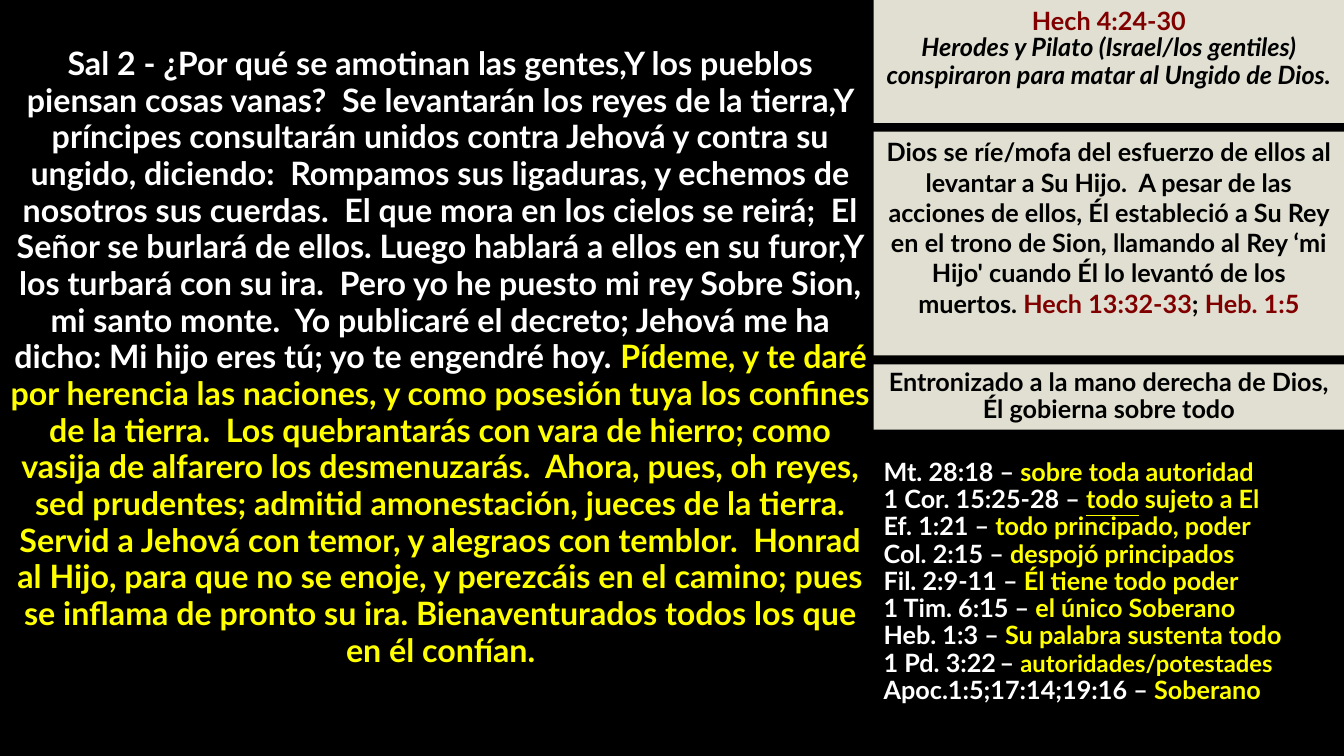
from pptx import Presentation
from pptx.dml.color import RGBColor
from pptx.enum.shapes import MSO_SHAPE
from pptx.enum.text import MSO_ANCHOR, MSO_AUTO_SIZE, PP_ALIGN
from pptx.util import Cm, Pt

RECTANGLE = MSO_SHAPE.RECTANGLE
TOP = MSO_ANCHOR.TOP
GROW = MSO_AUTO_SIZE.SHAPE_TO_FIT_TEXT
LEFT, CENTER = PP_ALIGN.LEFT, PP_ALIGN.CENTER

BLACK, WHITE, YELLOW = "000000", "FFFFFF", "FFFF00"
MAROON, PANEL_FILL = "800000", "E0DFD2"
FONT = "Lato"

# Content: a run is (text, colour, font values that differ from the base)
PSALM = [
    ("Sal 2 - ¿Por qué se amotinan las gentes,Y los pueblos piensan cosas vanas?  "
     "Se levantarán los reyes de la tierra,Y príncipes consultarán unidos contra "
     "Jehová y contra su ungido, diciendo:  Rompamos sus ligaduras, y echemos de "
     "nosotros sus cuerdas.  El que mora en los cielos se reirá;  El Señor se "
     "burlará de ellos. Luego hablará a ellos en su furor,Y los turbará con su ira.  "
     "Pero yo he puesto mi rey Sobre Sion, mi santo monte.  Yo publicaré el decreto; "
     "Jehová me ha dicho: Mi hijo eres tú; yo te engendré hoy. ", WHITE, {}),
    ("Pídeme, y te daré por herencia las naciones, y como posesión tuya los confines "
     "de la tierra.  Los quebrantarás con vara de hierro; como vasija de alfarero los "
     "desmenuzarás.  Ahora, pues, oh reyes, sed prudentes; admitid amonestación, "
     "jueces de la tierra. Servid a Jehová con temor, y alegraos con temblor.  Honrad "
     "al Hijo, para que no se enoje, y perezcáis en el camino; pues se inflama de "
     "pronto su ira. Bienaventurados todos los que en él confían.", YELLOW, {}),
]

# Panels: (height in cm, [(line spacing, runs)])
PANELS = [
    (3.1, [
        (1.0, [("Hech 4:24-30", MAROON, {})]),
        (0.9, [("Herodes y Pilato (Israel/los gentiles) conspiraron para matar al "
                "Ungido de Dios.", BLACK, {"italic": True})]),
    ]),
    (5.64, [
        (1.0, [("Dios se ríe/mofa del esfuerzo de ellos al levantar a Su Hijo.  "
                "A pesar de las acciones de ellos, Él estableció a Su Rey en el trono "
                "de Sion, llamando al Rey ‘mi Hijo' cuando Él lo levantó de los "
                "muertos. ", BLACK, {}),
               ("Hech 13:32-33", MAROON, {}),
               ("; ", BLACK, {}),
               ("Heb. 1:5", MAROON, {})]),
    ]),
    (1.65, [
        (0.9, [("Entronizado a la mano derecha de Dios, Él gobierna sobre todo",
                BLACK, {})]),
    ]),
]

REFERENCES = [
    [("Mt. 28:18 – ", WHITE, {}), ("sobre toda autoridad", YELLOW, {})],
    [("1 Cor. 15:25-28 – ", WHITE, {}), ("todo", YELLOW, {"underline": True}),
     (" sujeto a El", YELLOW, {})],
    [("Ef. 1:21 – ", WHITE, {}), ("todo principado, poder", YELLOW, {})],
    [("Col. 2:15 – ", WHITE, {}), ("despojó principados", YELLOW, {})],
    [("Fil. 2:9-11 – ", WHITE, {}), ("Él tiene todo poder", YELLOW, {})],
    [("1 Tim. 6:15 – ", WHITE, {}), ("el único Soberano", YELLOW, {})],
    [("Heb. 1:3 – ", WHITE, {}), ("Su palabra sustenta todo", YELLOW, {})],
    [("1 Pd. 3:22", WHITE, {}), (" ", WHITE, {"size": Pt(10)}), ("– ", WHITE, {}),
     ("autoridades/potestades", YELLOW, {"size": Pt(17)})],
    [("Apoc.1:5;17:14;19:16 – ", WHITE, {}), ("Soberano", YELLOW, {})],
]

# Layout in cm
SLIDE_WIDTH, SLIDE_HEIGHT = 33.87, 19.05
COLUMN_LEFT = 22.02
PANEL_GAP = 0.22
PSALM_BOX = (0, 1.04, 22.22, 18.01)
REFERENCES_BOX = (COLUMN_LEFT, 11.46, 12.27, 6.48)


def set_fill(fill, colour):
    fill.solid()
    fill.fore_color.rgb = RGBColor.from_string(colour)


def write_text(shape, paragraphs, alignment, size):
    frame = shape.text_frame
    for name, value in {"word_wrap": True, "auto_size": GROW,
                        "vertical_anchor": TOP}.items():
        setattr(frame, name, value)
    for index, (spacing, runs) in enumerate(paragraphs):
        paragraph = frame.add_paragraph() if index else frame.paragraphs[0]
        paragraph.alignment = alignment
        paragraph.line_spacing = spacing
        for text, colour, changes in runs:
            run = paragraph.add_run()
            run.text = text
            font_values = {"name": FONT, "size": Pt(size), "bold": True, **changes}
            for name, value in font_values.items():
                setattr(run.font, name, value)
            set_fill(run.font.fill, colour)


def add_text(slide, box, paragraphs, alignment, size):
    shape = slide.shapes.add_textbox(*map(Cm, box))
    write_text(shape, paragraphs, alignment, size)


def add_panel(slide, box, paragraphs):
    shape = slide.shapes.add_shape(RECTANGLE, *map(Cm, box))
    shape.shadow.inherit = False
    set_fill(shape.fill, PANEL_FILL)
    shape.line.fill.background()
    write_text(shape, paragraphs, CENTER, 18)


def main():
    presentation = Presentation()
    presentation.slide_width = Cm(SLIDE_WIDTH)
    presentation.slide_height = Cm(SLIDE_HEIGHT)
    slide = presentation.slides.add_slide(presentation.slide_layouts[6])
    set_fill(slide.background.fill, BLACK)

    # Psalm on the left, references at the lower right
    add_text(slide, PSALM_BOX, [(0.95, PSALM)], CENTER, 23)
    add_text(slide, REFERENCES_BOX, [(0.9, runs) for runs in REFERENCES], LEFT, 18)

    # Panels stacked down the right column
    top = 0
    for height, paragraphs in PANELS:
        add_panel(slide, (COLUMN_LEFT, top, SLIDE_WIDTH - COLUMN_LEFT, height),
                  paragraphs)
        top += height + PANEL_GAP

    presentation.save("out.pptx")


if __name__ == "__main__":
    main()
